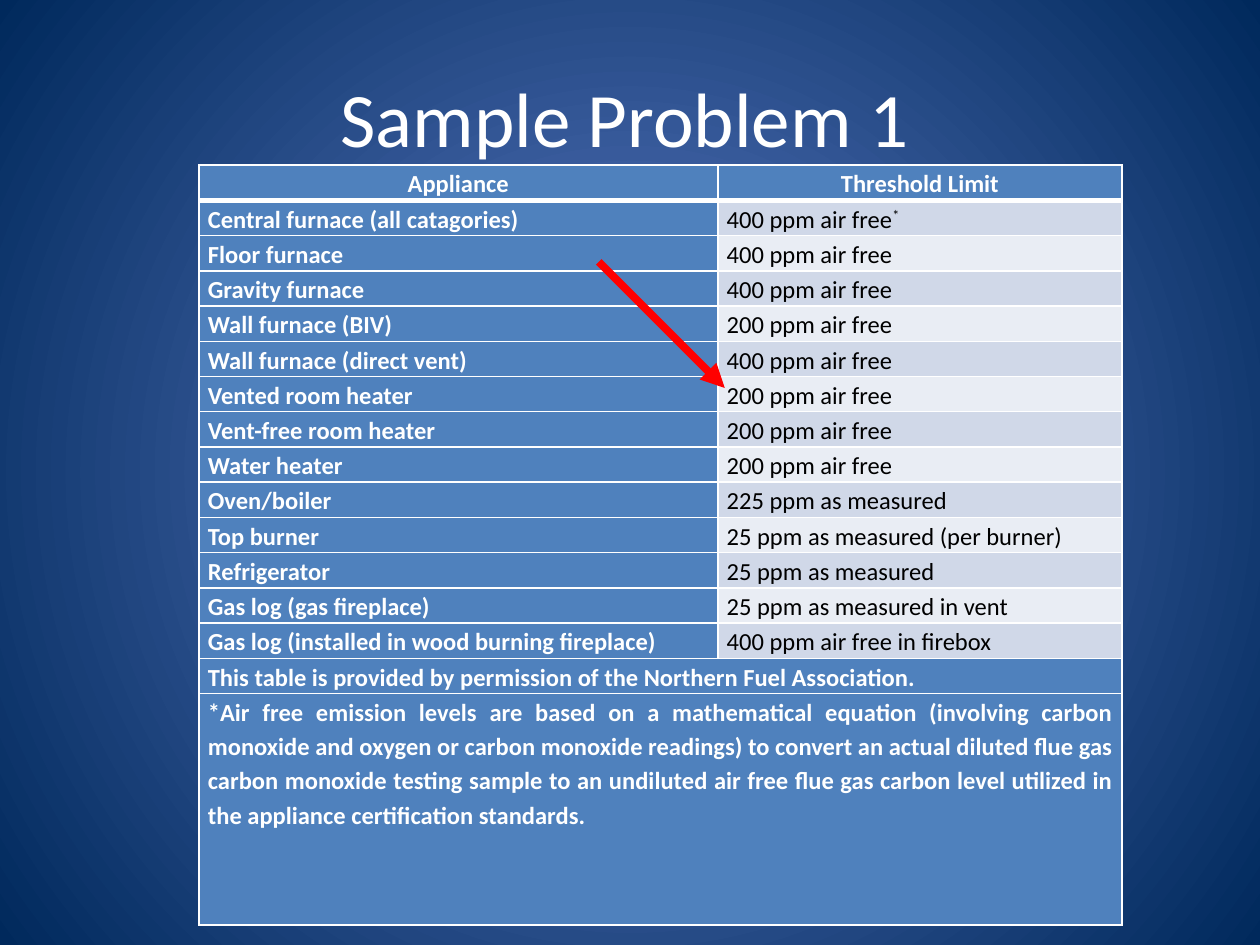
import dataclasses

import lxml.etree
import pptx
import pptx.dml.color
import pptx.enum.shapes
import pptx.enum.text
import pptx.oxml.ns
import pptx.oxml.xmlchemy
import pptx.util

Cm = pptx.util.Cm
Pt = pptx.util.Pt
ALIGN = pptx.enum.text.PP_ALIGN
qn = pptx.oxml.ns.qn
new_element = pptx.oxml.xmlchemy.OxmlElement


@dataclasses.dataclass(frozen=True)
class Theme:
    font: str = "Calibri"
    title_size: int = 44
    table_size: int = 14
    white: str = "FFFFFF"
    black: str = "000000"
    glow: str = "5E7CC5"
    navy: str = "00295C"
    blue: str = "4F81BD"
    bands: tuple = ("D0D8E8", "E9EDF4")
    red: str = "FF0000"


HEADINGS = ("Appliance", "Threshold Limit")
LIMITS = [
    ("Central furnace (all catagories)", "400 ppm air free*"),
    ("Floor furnace", "400 ppm air free"),
    ("Gravity furnace", "400 ppm air free"),
    ("Wall furnace (BIV)", "200 ppm air free"),
    ("Wall furnace (direct vent)", "400 ppm air free"),
    ("Vented room heater", "200 ppm air free"),
    ("Vent-free room heater", "200 ppm air free"),
    ("Water heater", "200 ppm air free"),
    ("Oven/boiler", "225 ppm as measured"),
    ("Top burner", "25 ppm as measured (per burner)"),
    ("Refrigerator", "25 ppm as measured"),
    ("Gas log (gas fireplace)", "25 ppm as measured in vent"),
    ("Gas log (installed in wood burning fireplace)", "400 ppm air free in firebox"),
]
NOTES = [
    "This table is provided by permission of the Northern Fuel Association.",
    "*Air free emission levels are based on a mathematical equation (involving carbon "
    "monoxide and oxygen or carbon monoxide readings) to convert an actual diluted flue gas "
    "carbon monoxide testing sample to an undiluted air free flue gas carbon level utilized "
    "in the appliance certification standards.",
]


def rgb(value):
    return pptx.dml.color.RGBColor.from_string(value)


def write(para, text, *, font, size, color, bold=False, align=None, superscript=False):
    """Add one formatted span of text to a paragraph."""
    span = para.add_run()
    span.text = text
    span.font.name = font
    span.font.size = Pt(size)
    span.font.bold = bold
    span.font.color.rgb = rgb(color)
    if align is not None:
        para.alignment = align
    if superscript:
        span.font._element.set("baseline", "30000")


class SlideBuilder:
    def __init__(self, page, theme):
        self.page = page
        self.theme = theme

    def background(self):
        fill = self.page.background.fill
        fill.gradient()
        for stop, color in zip(fill.gradient_stops, (self.theme.glow, self.theme.navy)):
            stop.color.rgb = rgb(color)
        # Turn the linear gradient into a circular one around the centre
        linear = next(self.page.element.iter(qn("a:lin")))
        circle = new_element("a:path")
        circle.set("path", "circle")
        centre = lxml.etree.SubElement(circle, qn("a:fillToRect"))
        for side in "ltrb":
            centre.set(side, "50000")
        linear.getparent().replace(linear, circle)

    def title(self, text, left, top, width, height):
        box = self.page.shapes.title
        box.left, box.top, box.width, box.height = Cm(left), Cm(top), Cm(width), Cm(height)
        box.text_frame.vertical_anchor = pptx.enum.text.MSO_ANCHOR.MIDDLE
        write(box.text_frame.paragraphs[0], text, font=self.theme.font,
              size=self.theme.title_size, color=self.theme.white, align=ALIGN.CENTER)

    def table(self, left, top, widths, heights):
        table = self.page.shapes.add_table(
            len(heights), len(widths), Cm(left), Cm(top),
            Cm(sum(widths)), Cm(sum(heights))).table
        for column, width in zip(table.columns, widths):
            column.width = Cm(width)
        for row, height in zip(table.rows, heights):
            row.height = Cm(height)
        return table

    def borders(self, cell, top=1, bottom=1):
        properties = cell._tc.get_or_add_tcPr()
        sides = {"a:lnL": 1, "a:lnR": 1, "a:lnT": top, "a:lnB": bottom}
        for index, (tag, width) in enumerate(sides.items()):
            line = new_element(tag)
            line.set("w", str(int(Pt(width))))
            fill = lxml.etree.SubElement(line, qn("a:solidFill"))
            lxml.etree.SubElement(fill, qn("a:srgbClr")).set("val", self.theme.white)
            properties.insert(index, line)

    def cell(self, cell, text, *, fill, color, bold=True, align=ALIGN.LEFT,
             space_after=0, top=1, bottom=1):
        cell.fill.solid()
        cell.fill.fore_color.rgb = rgb(fill)
        cell.margin_left = cell.margin_right = Cm(0.18)
        cell.margin_top = cell.margin_bottom = 0
        self.borders(cell, top, bottom)
        para = cell.text_frame.paragraphs[0]
        para.line_spacing = 1.15
        para.space_after = Pt(space_after)
        style = dict(font=self.theme.font, size=self.theme.table_size,
                     color=color, bold=bold, align=align)
        # A closing asterisk is a raised footnote mark
        body = text.removesuffix("*")
        write(para, body, **style)
        if body != text:
            write(para, "*", superscript=True, **style)

    def arrow(self, start_x, start_y, end_x, end_y, width):
        arrow = self.page.shapes.add_connector(
            pptx.enum.shapes.MSO_CONNECTOR.STRAIGHT,
            Cm(start_x), Cm(start_y), Cm(end_x), Cm(end_y))
        arrow.line.color.rgb = rgb(self.theme.red)
        arrow.line.width = Pt(width)
        line = arrow.line._get_or_add_ln()
        lxml.etree.SubElement(line, qn("a:tailEnd")).set("type", "triangle")
        lxml.etree.SubElement(arrow._element.spPr, qn("a:effectLst"))


def main():
    theme = Theme()
    deck = pptx.Presentation()
    deck.slide_width, deck.slide_height = Cm(25.4), Cm(19.05)
    builder = SlideBuilder(deck.slides.add_slide(deck.slide_layouts[5]), theme)

    builder.background()
    builder.title("Sample Problem 1", 0.43, 0.76, 24.33, 3.18)

    # Threshold table: headings, one row per appliance, merged notes
    heights = [0.71] * (len(LIMITS) + 2) + [4.67]
    table = builder.table(4.01, 3.33, (10.46, 8.15), heights)
    label = dict(fill=theme.blue, color=theme.white)
    for column, heading in enumerate(HEADINGS):
        builder.cell(table.cell(0, column), heading, align=ALIGN.CENTER, bottom=3, **label)
    for row, (appliance, limit) in enumerate(LIMITS, start=1):
        top = 3 if row == 1 else 1
        builder.cell(table.cell(row, 0), appliance, align=ALIGN.JUSTIFY, top=top, **label)
        builder.cell(table.cell(row, 1), limit, fill=theme.bands[(row - 1) % 2],
                     color=theme.black, bold=False, top=top)
    for row, note in enumerate(NOTES, start=len(LIMITS) + 1):
        table.cell(row, 0).merge(table.cell(row, 1))
        builder.cell(table.cell(row, 0), note, align=ALIGN.JUSTIFY, space_after=5, **label)
        builder.borders(table.cell(row, 1))

    # Pointer to the vented room heater limit
    builder.arrow(12.07, 5.28, 14.61, 7.82, 4.5)

    deck.save("out.pptx")


if __name__ == "__main__":
    main()
